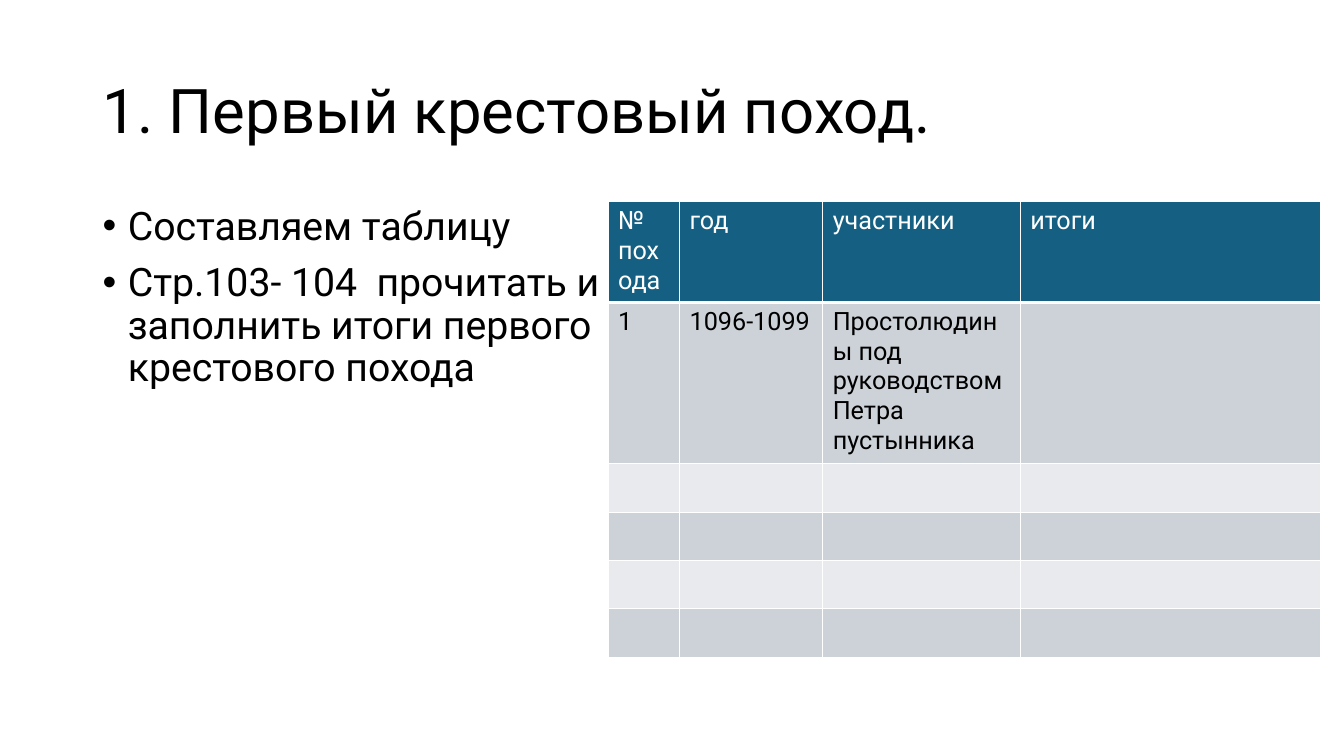
"""Build the slide on the First Crusade with a task list and a table to fill in."""
from dataclasses import dataclass

from lxml.etree import SubElement
from pptx import Presentation
from pptx.dml.color import RGBColor
from pptx.enum.text import MSO_ANCHOR, MSO_AUTO_SIZE, PP_ALIGN
from pptx.oxml.ns import qn
from pptx.slide import Slide
from pptx.table import _Cell as Cell
from pptx.text.text import TextFrame, _Paragraph as Paragraph
from pptx.util import Emu, Pt

PX = 9144
FONT = "Roboto"
BLACK = RGBColor(0x00, 0x00, 0x00)
WHITE = RGBColor(0xFF, 0xFF, 0xFF)
TEAL = RGBColor(0x15, 0x60, 0x82)
DARK_BAND = RGBColor(0xCC, 0xD2, 0xD8)
LIGHT_BAND = RGBColor(0xE8, 0xEA, 0xED)


@dataclass(frozen=True)
class Area:
    left: int
    top: int
    width: int
    height: int

    def emu(self) -> list[Emu]:
        return [px(n) for n in (self.left, self.top, self.width, self.height)]


@dataclass(frozen=True)
class Column:
    heading: str
    width: int
    entry: str = ""


TITLE = "1. Первый крестовый поход."
TITLE_AREA = Area(92, 40, 1150, 145)
TASKS = [
    "Составляем таблицу",
    "Стр.103- 104  прочитать и заполнить итоги первого крестового похода",
]
TASKS_AREA = Area(92, 200, 567, 476)
COLUMNS = [
    Column("№ похода", 71, "1"),
    Column("год", 142, "1096-1099"),
    Column("участники", 196, "Простолюдины под руководством Петра пустынника"),
    Column("итоги", 298),
]
TABLE_AREA = Area(603, 200, 707, 323)
HEADER_HEIGHT = 83
ROW_HEIGHT = 48
ROW_COUNT = 6


def px(length: int) -> Emu:
    return Emu(length * PX)


def add_bullet(para: Paragraph, indent: int) -> None:
    properties = para._p.get_or_add_pPr()
    properties.set("marL", str(px(indent)))
    properties.set("indent", str(-px(indent)))
    SubElement(properties, qn("a:buFont")).set("typeface", "Arial")
    SubElement(properties, qn("a:buChar")).set("char", "•")


def write(frame: TextFrame, lines: list[str], *, size: int, color: RGBColor = BLACK,
          spacing: float = 1.0, gap: int = 0, bullet_indent: int = 0) -> None:
    frame.word_wrap = True
    for index, line in enumerate(lines):
        para = frame.add_paragraph() if index else frame.paragraphs[0]
        if bullet_indent:
            add_bullet(para, bullet_indent)
        para.alignment = PP_ALIGN.LEFT
        para.line_spacing = spacing
        para.space_before = Pt(gap if index else 0)
        span = para.add_run()
        span.text = line
        span.font.name = FONT
        span.font.size = Pt(size)
        span.font.color.rgb = color


def add_borders(cell: Cell, bottom: int) -> None:
    properties = cell._tc.get_or_add_tcPr()
    for side, width in {"L": 1, "R": 1, "T": 1, "B": bottom}.items():
        line = SubElement(properties, qn(f"a:ln{side}"), w=str(Pt(width)))
        fill = SubElement(line, qn("a:solidFill"))
        SubElement(fill, qn("a:srgbClr")).set("val", str(WHITE))


def style_cell(cell: Cell, text: str, row: int) -> None:
    is_header = row == 0
    add_borders(cell, bottom=3 if is_header else 1)
    cell.fill.solid()
    band = DARK_BAND if row % 2 else LIGHT_BAND
    cell.fill.fore_color.rgb = TEAL if is_header else band
    if text:
        write(cell.text_frame, [text], size=18, color=WHITE if is_header else BLACK)


def add_title(page: Slide) -> None:
    title = page.shapes.title
    title.left, title.top, title.width, title.height = TITLE_AREA.emu()
    frame = title.text_frame
    frame.auto_size = MSO_AUTO_SIZE.NONE
    frame.vertical_anchor = MSO_ANCHOR.MIDDLE
    write(frame, [TITLE], size=44, spacing=0.9)


def add_tasks(page: Slide) -> None:
    box = page.shapes.add_textbox(*TASKS_AREA.emu())
    write(box.text_frame, TASKS, size=28, spacing=0.9, gap=10, bullet_indent=25)


def add_crusade_table(page: Slide) -> None:
    table = page.shapes.add_table(ROW_COUNT, len(COLUMNS), *TABLE_AREA.emu()).table
    for row in range(ROW_COUNT):
        table.rows[row].height = px(ROW_HEIGHT if row else HEADER_HEIGHT)
    for index, column in enumerate(COLUMNS):
        table.columns[index].width = px(column.width)
        texts = {0: column.heading, 1: column.entry}
        for row in range(ROW_COUNT):
            style_cell(table.cell(row, index), texts.get(row, ""), row)


def main() -> None:
    deck = Presentation()
    deck.slide_width, deck.slide_height = px(1333), px(750)
    page = deck.slides.add_slide(deck.slide_layouts.get_by_name("Title Only"))
    add_title(page)
    add_tasks(page)
    add_crusade_table(page)
    deck.save("out.pptx")


if __name__ == "__main__":
    main()
